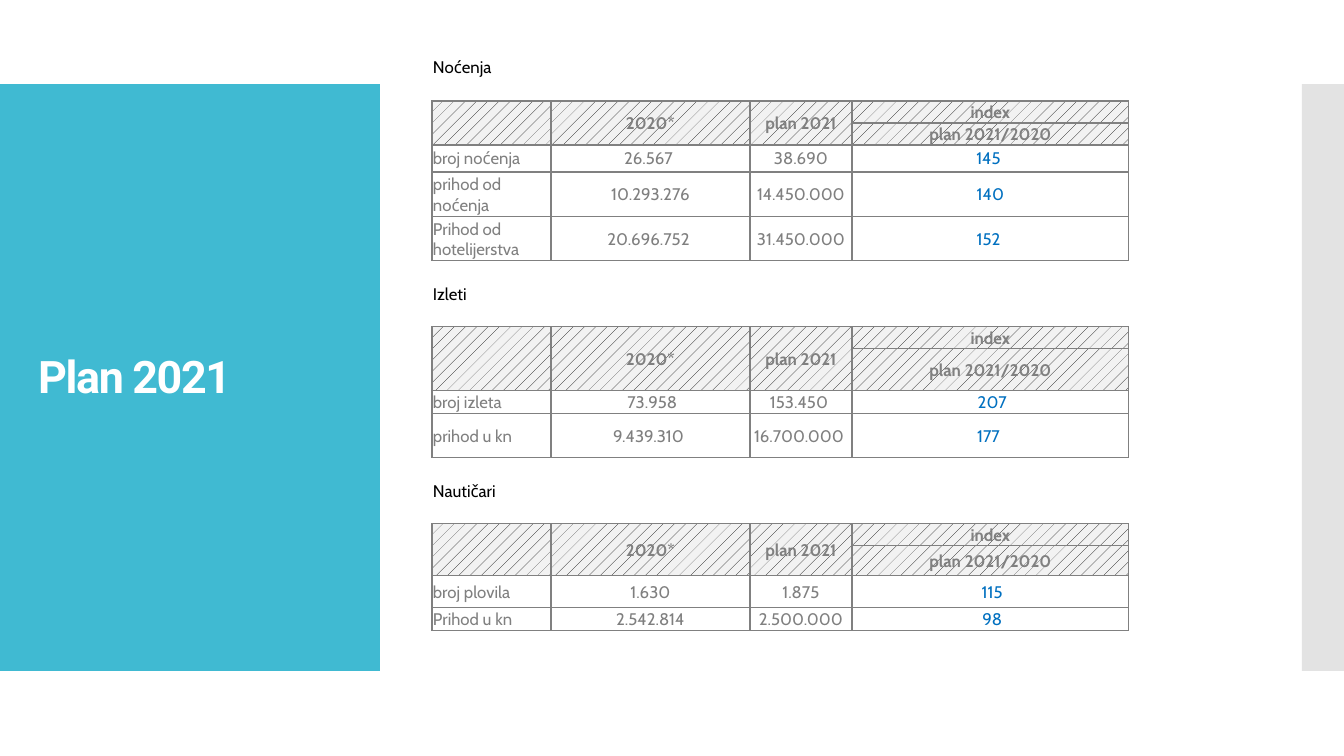
"""Build the Plan 2021 slide with its sectioned planning table."""
import pptx
import pptx.dml.color
import pptx.enum.dml
import pptx.enum.shapes
import pptx.enum.text
import pptx.oxml
import pptx.oxml.ns
import pptx.util
from lxml import etree

RGBColor = pptx.dml.color.RGBColor
TEAL = RGBColor(0x40, 0xBA, 0xD2)
PALE_GRAY = RGBColor(0xC8, 0xC8, 0xC8)
HEADER_GRAY = RGBColor(0xF2, 0xF2, 0xF2)
GRAY = RGBColor(0x80, 0x80, 0x80)
VALUE_GRAY = RGBColor(0x7F, 0x7F, 0x7F)
BLUE = RGBColor(0x00, 0x70, 0xC0)
BLACK = RGBColor(0, 0, 0)
WHITE = RGBColor(0xFF, 0xFF, 0xFF)

SLIDE_WIDTH, SLIDE_HEIGHT = 1344, 756
EMU_PER_PX = 12192000 / SLIDE_WIDTH
PLAIN_TABLE_STYLE = "{2D5ABB26-0587-4C30-8999-92F81FD0307C}"
COLUMN_WIDTHS = [67, 119, 199, 102, 277]
GAP_HEIGHT = 22
HEADER = ["", "2020*", "plan 2021", "index"]
INDEX_DETAIL = "plan 2021/2020"

SECTIONS = [
    ("Noćenja", [22, 22], [
        ([27], ["broj noćenja", "26.567 ", "38.690", "145 "]),
        ([45], ["prihod od noćenja", "10.293.276", "14.450.000", "140"]),
        ([44], ["Prihod od hotelijerstva", "20.696.752 ", "31.450.000", "152 "]),
    ]),
    ("Izleti", [22, 42], [
        ([23], ["broj izleta", " 73.958", "153.450 ", " 207"]),
        ([22, 22], ["prihod u kn", "9.439.310 ", "16.700.000 ", "177 "]),
    ]),
    ("Nautičari", [22, 30], [
        ([32], ["broj plovila", "1.630", "1.875", " 115"]),
        ([23], ["Prihod u kn", "2.542.814", "2.500.000", " 98"]),
    ]),
]


def px(length):
    """Convert whole pixels to EMU."""
    return pptx.util.Emu(round(length * EMU_PER_PX))


def add_panel(slide, left, width, color, opacity=100):
    """Add a full-height side panel."""
    panel = slide.shapes.add_shape(
        pptx.enum.shapes.MSO_SHAPE.RECTANGLE, px(left), px(84), px(width), px(587))
    panel.shadow.inherit = False
    panel.line.fill.background()
    panel.fill.solid()
    panel.fill.fore_color.rgb = color
    if opacity < 100:
        color_element = panel._element.spPr.find(".//" + pptx.oxml.ns.qn("a:srgbClr"))
        alpha = etree.SubElement(color_element, pptx.oxml.ns.qn("a:alpha"))
        alpha.set("val", str(opacity * 1000))


def format_title(slide, text):
    """Place the title placeholder over the teal panel."""
    title = slide.shapes.title
    title.left, title.top, title.width, title.height = px(28), px(124), px(325), px(284)
    slide.shapes._spTree.append(title._element)
    frame = title.text_frame
    frame.text = text
    frame.word_wrap = True
    frame.auto_size = pptx.enum.text.MSO_AUTO_SIZE.NONE
    frame.vertical_anchor = pptx.enum.text.MSO_ANCHOR.BOTTOM
    paragraph = frame.paragraphs[0]
    paragraph.alignment = pptx.enum.text.PP_ALIGN.LEFT
    paragraph.line_spacing = 0.9
    font = paragraph.font
    font.name, font.size, font.bold = "Roboto", pptx.util.Pt(32), True
    font.color.rgb = WHITE
    font._rPr.set("spc", "-100")


def set_borders(cell, edges):
    """Draw gray lines on the given cell edges, named by L, R, T and B."""
    properties = cell._tc.get_or_add_tcPr()
    for position, edge in enumerate(edges):
        properties.insert(position, pptx.oxml.parse_xml(
            f'<a:ln{edge} {pptx.oxml.ns.nsdecls("a")} w="12700"><a:solidFill>'
            f'<a:srgbClr val="{GRAY}"/></a:solidFill></a:ln{edge}>'))


def write_cell(cell, text, color, bold=False, centered=True):
    """Write one line of table text."""
    paragraph = cell.text_frame.paragraphs[0]
    paragraph.text = text
    if centered:
        paragraph.alignment = pptx.enum.text.PP_ALIGN.CENTER
    paragraph.font.bold = bold
    paragraph.font.color.rgb = color


def prepare_cell(cell):
    """Give a cell its plain look."""
    cell.margin_left = cell.margin_right = cell.margin_top = px(1)
    cell.margin_bottom = 0
    cell.vertical_anchor = pptx.enum.text.MSO_ANCHOR.MIDDLE
    cell.fill.background()
    font = cell.text_frame.paragraphs[0].font
    font.name, font.size = "Cabin", pptx.util.Pt(12)


def fill_header(table, row):
    """Fill the two header rows of a section."""
    for column, text in enumerate(HEADER, start=1):
        is_index = column == len(HEADER)
        upper, lower = table.cell(row, column), table.cell(row + 1, column)
        for cell in (upper, lower):
            cell.fill.patterned()
            cell.fill.pattern = pptx.enum.dml.MSO_PATTERN.PERCENT_10
            cell.fill.fore_color.rgb = BLACK
            cell.fill.back_color.rgb = HEADER_GRAY
        set_borders(upper, "LRT" if is_index else "LRTB")
        set_borders(lower, "LRB" if is_index else "LRTB")
        write_cell(upper, text, GRAY, bold=True)
        if is_index:
            write_cell(lower, INDEX_DETAIL, GRAY, bold=True)
        else:
            upper.merge(lower)


def fill_data(table, row, span, texts):
    """Fill one record, merged downwards where it spans rows."""
    colors = [GRAY, VALUE_GRAY, GRAY, BLUE]
    for column, (text, color) in enumerate(zip(texts, colors), start=1):
        cells = [table.cell(row + offset, column) for offset in range(span)]
        for cell in cells:
            set_borders(cell, "LRTB")
        write_cell(cells[0], text, color, centered=column > 1)
        if span > 1:
            cells[0].merge(cells[-1])


def list_row_heights():
    """Collect the row heights of all sections, with a gap row between sections."""
    heights = []
    for _, header_heights, records in SECTIONS:
        if heights:
            heights.append(GAP_HEIGHT)
        heights += [GAP_HEIGHT, GAP_HEIGHT + (len(heights) == 0)] + header_heights
        for record_heights, _ in records:
            heights += record_heights
    return heights


def add_plan_table(slide):
    """Add the planning table with all sections."""
    heights = list_row_heights()
    frame = slide.shapes.add_table(
        len(heights), len(COLUMN_WIDTHS), px(365), px(56),
        px(sum(COLUMN_WIDTHS)), px(sum(heights)))
    table = frame.table
    table.first_row = table.horz_banding = False
    table._tbl.tblPr.find(pptx.oxml.ns.qn("a:tableStyleId")).text = PLAIN_TABLE_STYLE
    for column, width in zip(table.columns, COLUMN_WIDTHS):
        column.width = px(width)
    for row, height in zip(table.rows, heights):
        row.height = px(height)
    for cell in table.iter_cells():
        prepare_cell(cell)
    row = 0
    for name, _, records in SECTIONS:
        write_cell(table.cell(row, 1), name, BLACK, centered=False)
        fill_header(table, row + 2)
        row += 4
        for record_heights, texts in records:
            fill_data(table, row, len(record_heights), texts)
            row += len(record_heights)
        row += 1


def main():
    """Build and save the presentation."""
    presentation = pptx.Presentation()
    presentation.slide_width, presentation.slide_height = px(SLIDE_WIDTH), px(SLIDE_HEIGHT)
    slide = presentation.slides.add_slide(presentation.slide_layouts[5])
    add_panel(slide, 0, 380, TEAL)
    add_panel(slide, 1302, 42, PALE_GRAY, opacity=50)
    format_title(slide, "Plan 2021")
    add_plan_table(slide)
    presentation.save("out.pptx")


if __name__ == "__main__":
    main()
